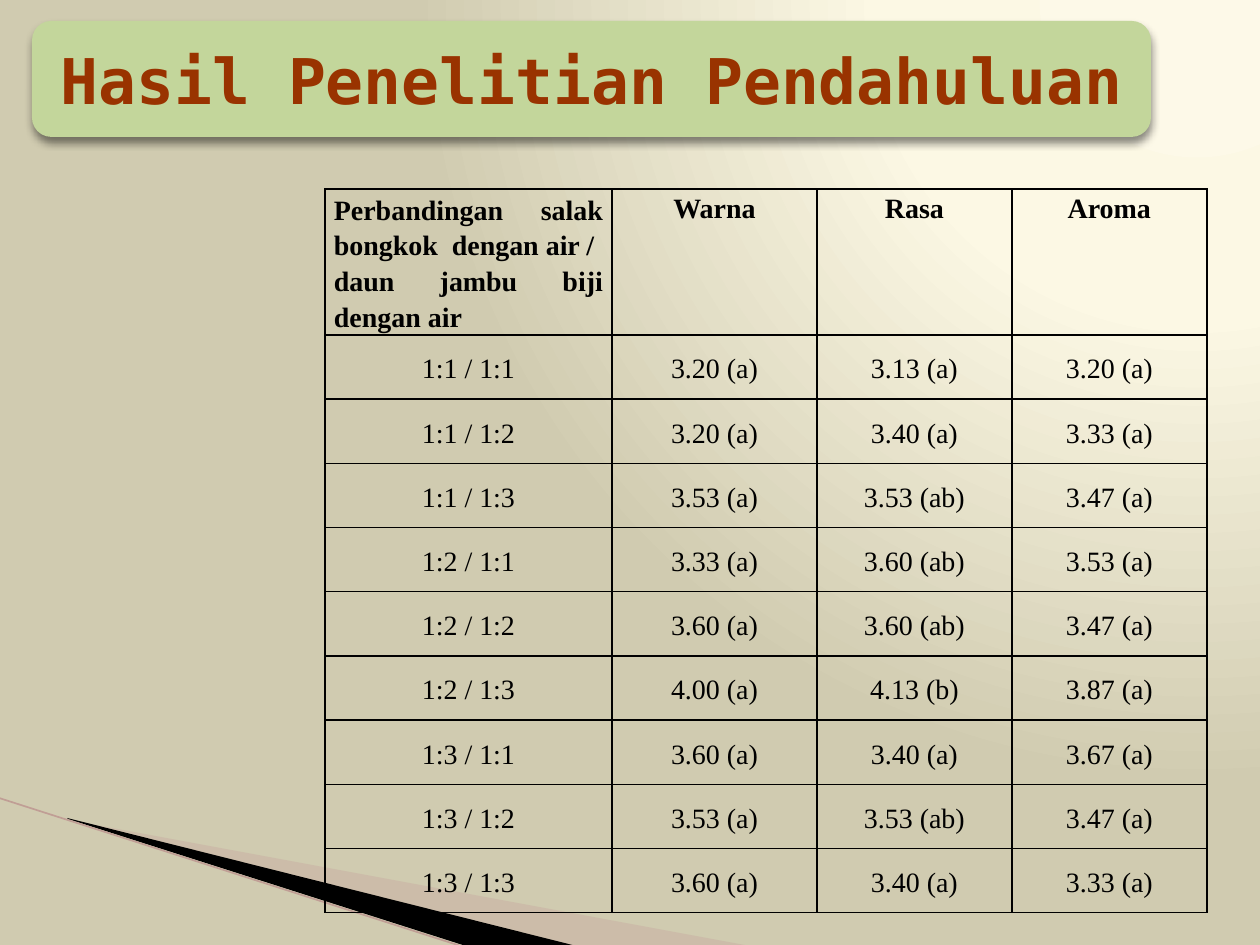
from lxml import etree
from pptx import Presentation
from pptx.dml.color import RGBColor
from pptx.enum.shapes import MSO_CONNECTOR, MSO_SHAPE
from pptx.enum.text import MSO_ANCHOR as ANCHOR, PP_ALIGN as ALIGN
from pptx.oxml import parse_xml
from pptx.oxml.ns import nsdecls, qn
from pptx.util import Pt

PX = 914400 // 126
COLORS = {
    "ink": "000000", "title": "993300", "banner": "C3D69B",
    "wedge": "C6A79F", "edge": "C09E95",
}
BACKGROUND = [(0, "FDF9E8"), (40, "FCF8E4"), (100, "D0CBB0")]
TITLE = "Hasil Penelitian Pendahuluan "
TITLE_BOX = (32, 21, 1119, 116)
WEDGES = [
    ([(69, 820), (750, 946), (575, 946), (69, 819)], "wedge", 40),
    ([(67, 818), (576, 946), (469, 947), (68, 819)], "ink", 100),
]
EDGE = (-1, 798, 467, 948)

HEADER = [
    "Perbandingan salak bongkok  dengan air / \ndaun jambu biji dengan air",
    "Warna", "Rasa", "Aroma",
]
ROWS = [
    ("1:1 / 1:1", "3.20 (a)", "3.13 (a)", "3.20 (a)"),
    ("1:1 / 1:2", "3.20 (a)", "3.40 (a)", "3.33 (a)"),
    ("1:1 / 1:3", "3.53 (a)", "3.53 (ab)", "3.47 (a)"),
    ("1:2 / 1:1", "3.33 (a)", "3.60 (ab)", "3.53 (a)"),
    ("1:2 / 1:2", "3.60 (a)", "3.60 (ab)", "3.47 (a)"),
    ("1:2 / 1:3", "4.00 (a)", "4.13 (b)", "3.87 (a)"),
    ("1:3 / 1:1", "3.60 (a)", "3.40 (a)", "3.67 (a)"),
    ("1:3 / 1:2", "3.53 (a)", "3.53 (ab)", "3.47 (a)"),
    ("1:3 / 1:3", "3.60 (a)", "3.40 (a)", "3.33 (a)"),
]
TABLE_LEFT, TABLE_TOP, TABLE_HEIGHT = 325, 189, 724
HEADER_HEIGHT = 146
COL_WIDTHS = [287, 205, 195, 195]


def rgb(name):
    return RGBColor.from_string(COLORS[name])


def px(*values):
    return [v * PX for v in values]


def style(p, font, size, color, bold, align):
    p.alignment = align
    for r in p.runs:
        r.font.name = font
        r.font.size = Pt(size)
        r.font.bold = bold
        r.font.color.rgb = rgb(color)


def set_background(s):
    s.background.fill.gradient()
    grad = s.background.fill._fill._gradFill
    stops = "".join(
        f'<a:gs pos="{pos * 1000}"><a:srgbClr val="{color}"/></a:gs>'
        for pos, color in BACKGROUND)
    grad.getparent().replace(grad, parse_xml(
        f'<a:gradFill {nsdecls("a")} rotWithShape="1"><a:gsLst>{stops}</a:gsLst>'
        '<a:path path="circle"><a:fillToRect l="95000" t="-106000" '
        'r="5000" b="206000"/></a:path></a:gradFill>'))


def add_wedge(s, points, color, opacity):
    start, *rest = points
    builder = s.shapes.build_freeform(*start, scale=PX)
    builder.add_line_segments(rest)
    sp = builder.convert_to_shape()
    sp.shadow.inherit = False
    sp.fill.solid()
    sp.fill.fore_color.rgb = rgb(color)
    sp.line.fill.background()
    if opacity < 100:
        clr = sp.fill._xPr.find(qn("a:solidFill"))[0]
        etree.SubElement(clr, qn("a:alpha"), val=str(opacity * 1000))


def add_edge(s):
    line = s.shapes.add_connector(MSO_CONNECTOR.STRAIGHT, *px(*EDGE))
    line.line.color.rgb = rgb("edge")
    line.line.width = Pt(0.95)
    etree.SubElement(line._element.spPr, qn("a:effectLst"))


def add_banner(s):
    sp = s.shapes.add_shape(MSO_SHAPE.ROUNDED_RECTANGLE, *px(*TITLE_BOX))
    sp.fill.solid()
    sp.fill.fore_color.rgb = rgb("banner")
    sp.line.fill.background()
    sp.shadow.inherit = False
    sp._element.spPr.find(qn("a:effectLst")).append(parse_xml(
        f'<a:outerShdw {nsdecls("a")} blurRad="{Pt(5)}" dist="{Pt(3)}" '
        f'dir="5400000" rotWithShape="0"><a:srgbClr val="{COLORS["ink"]}">'
        '<a:alpha val="45000"/></a:srgbClr></a:outerShdw>'))
    tf = sp.text_frame
    tf.text = TITLE
    tf.vertical_anchor = ANCHOR.MIDDLE
    style(tf.paragraphs[0], "DejaVu Sans Mono", 36, "title", True, ALIGN.CENTER)


def add_borders(cell):
    tcPr = cell._tc.get_or_add_tcPr()
    for i, side in enumerate(("lnL", "lnR", "lnT", "lnB")):
        tcPr.insert(i, parse_xml(
            f'<a:{side} {nsdecls("a")} w="{Pt(1)}"><a:solidFill>'
            f'<a:srgbClr val="{COLORS["ink"]}"/></a:solidFill></a:{side}>'))


def add_results(s):
    data = [HEADER, *ROWS]
    box = px(TABLE_LEFT, TABLE_TOP, sum(COL_WIDTHS), TABLE_HEIGHT)
    table = s.shapes.add_table(len(data), len(HEADER), *box).table
    table.first_row = table.horz_banding = False
    for col, width in zip(table.columns, COL_WIDTHS):
        col.width = width * PX
    body_height = (TABLE_HEIGHT - HEADER_HEIGHT) * PX // len(ROWS)
    for i, values in enumerate(data):
        table.rows[i].height = body_height if i else HEADER_HEIGHT * PX
        for j, value in enumerate(values):
            cell = table.cell(i, j)
            cell.text = value
            cell.fill.background()
            add_borders(cell)
            cell.margin_left = cell.margin_right = 9 * PX
            cell.margin_top = cell.margin_bottom = 0
            column_head = i == 0 and j > 0
            cell.vertical_anchor = ANCHOR.TOP if column_head else ANCHOR.MIDDLE
            align = ALIGN.JUSTIFY if i == j == 0 else ALIGN.CENTER
            for p in cell.text_frame.paragraphs:
                p.line_spacing = 1.15
                style(p, "Times New Roman", 16, "ink", i == 0, align)


def main():
    prs = Presentation()
    prs.slide_width, prs.slide_height = px(1260, 945)
    s = prs.slides.add_slide(prs.slide_layouts[6])
    set_background(s)
    for wedge in WEDGES:
        add_wedge(s, *wedge)
    add_edge(s)
    add_banner(s)
    add_results(s)
    prs.save("out.pptx")


if __name__ == "__main__":
    main()
